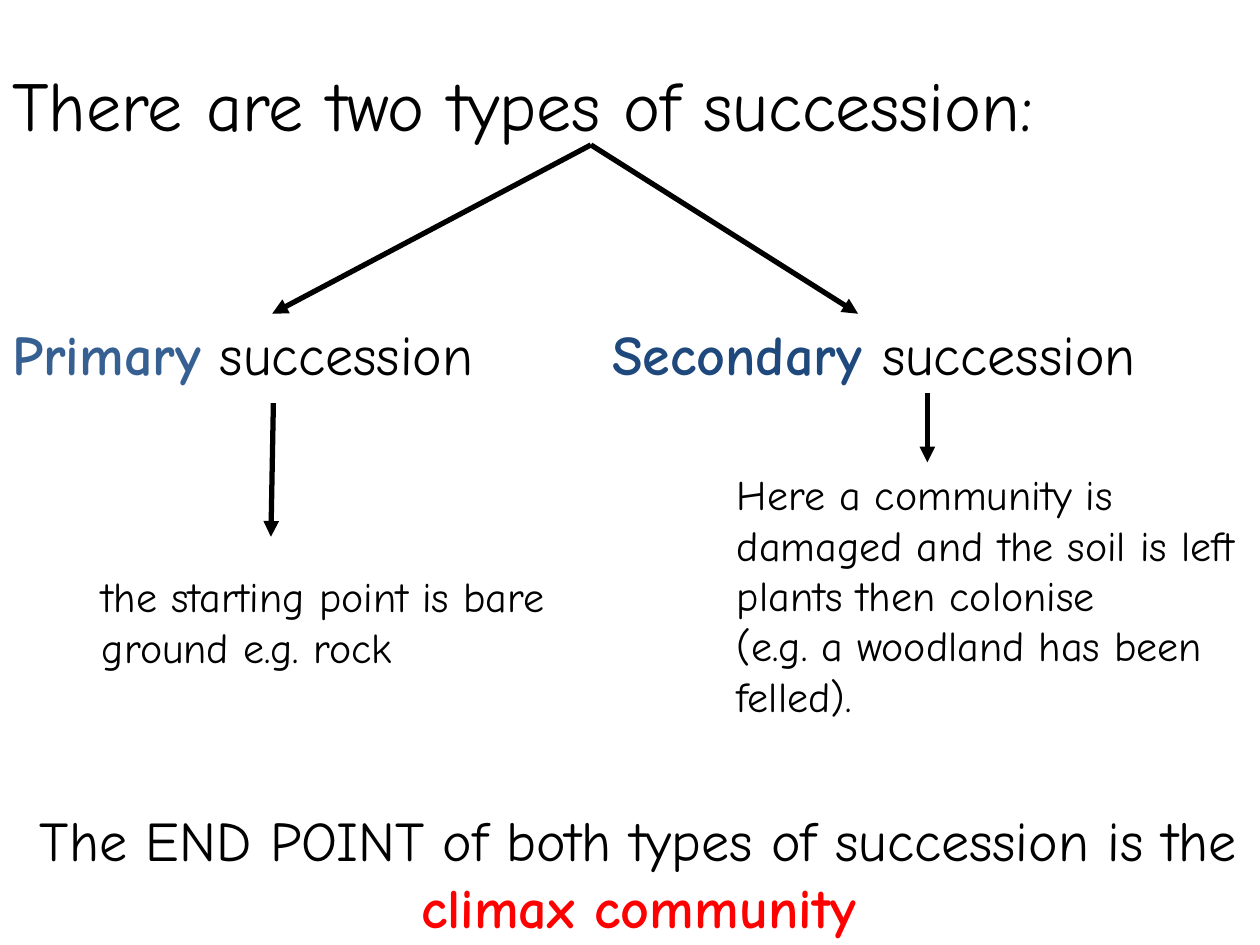
"""Build a slide that explains the two types of ecological succession."""
from lxml.etree import SubElement
from pptx import Presentation
from pptx.dml.color import RGBColor
from pptx.enum.shapes import MSO_CONNECTOR, MSO_SHAPE
from pptx.enum.text import MSO_ANCHOR, MSO_AUTO_SIZE, PP_ALIGN
from pptx.oxml.ns import qn
from pptx.util import Inches, Pt

COLORS = {
    "ink": "000000",
    "paper": "FFFFFF",
    "primary": "376092",
    "secondary": "1F497D",
    "climax": "FF0000",
}
COLUMNS, ROWS = 100, 75
TITLE, HEADING, BODY = 40, 32, 24


def rgb(name):
    return RGBColor.from_string(COLORS[name])


def assign(target, values):
    for attribute, value in values.items():
        setattr(target, attribute, value)


class SlideBuilder:
    def __init__(self, font="Comic Neue", line_width=3):
        self.font, self.line_width = font, Pt(line_width)
        self.deck = Presentation()
        assign(self.deck, {"slide_width": Inches(10), "slide_height": Inches(7.5)})
        self.slide = self.deck.slides.add_slide(self.deck.slide_layouts[6])

    def place(self, column, row):
        return (round(self.deck.slide_width * column / COLUMNS),
                round(self.deck.slide_height * row / ROWS))

    def fill_text(self, frame, paragraphs, size, wrap, align=PP_ALIGN.LEFT):
        assign(frame, {"word_wrap": wrap, "auto_size": MSO_AUTO_SIZE.SHAPE_TO_FIT_TEXT})
        for index, parts in enumerate(paragraphs):
            paragraph = frame.add_paragraph() if index else frame.paragraphs[0]
            paragraph.alignment = align
            for wording, color in parts:
                run = paragraph.add_run()
                run.text = wording
                assign(run.font, {"name": self.font, "size": Pt(size), "bold": color != "ink"})
                run.font.color.rgb = rgb(color)

    def text(self, corner, extent, paragraphs, size, wrap=True):
        box = self.slide.shapes.add_textbox(*self.place(*corner), *self.place(*extent))
        self.fill_text(box.text_frame, paragraphs, size, wrap)

    def banner(self, corner, extent, paragraphs, size):
        panel = self.slide.shapes.add_shape(
            MSO_SHAPE.RECTANGLE, *self.place(*corner), *self.place(*extent))
        panel.shadow.inherit = False
        panel.fill.solid()
        panel.fill.fore_color.rgb = rgb("paper")
        panel.line.fill.background()
        panel.text_frame.vertical_anchor = MSO_ANCHOR.TOP
        self.fill_text(panel.text_frame, paragraphs, size, True, PP_ALIGN.CENTER)

    def arrow(self, start, end):
        connector = self.slide.shapes.add_connector(
            MSO_CONNECTOR.STRAIGHT, *self.place(*start), *self.place(*end))
        connector.line.width = self.line_width
        connector.line.color.rgb = rgb("ink")
        properties = connector._element.spPr
        SubElement(properties.find(qn("a:ln")), qn("a:tailEnd"), type="triangle")
        SubElement(properties, qn("a:effectLst"))


def main():
    builder = SlideBuilder()
    builder.text((0, 4.4), (92.8, 7.7),
                 [[("There are two types of succession:", "ink")]], TITLE, wrap=False)
    fork = (46.9, 11.5)
    for branch_end in ((21.6, 24.9), (68.1, 24.9)):
        builder.arrow(fork, branch_end)

    builder.text((0, 24.9), (41.8, 6.4),
                 [[("Primary", "primary"), (" succession", "ink")]], HEADING, wrap=False)
    builder.text((47.6, 24.9), (48.4, 6.4),
                 [[("Secondary ", "secondary"), ("succession", "ink")]], HEADING, wrap=False)

    builder.arrow((21.7, 32), (21.5, 42.6))
    builder.text((7.1, 44.8), (42.9, 9.1),
                 [[("the starting point is bare ground e.g. rock", "ink")]], BODY)

    builder.arrow((73.6, 31.2), (73.6, 36.7))
    builder.text((57.5, 36.7), (42.5, 21.2), [
        [("Here a community is damaged and the soil is left plants then colonise", "ink")],
        [("(e.g. a woodland has been felled).", "ink")],
    ], BODY)

    builder.banner((0.7, 63.4), (100, 11.8), [[
        ("The END POINT of both types of succession is the ", "ink"),
        ("climax community", "climax"),
    ]], HEADING)
    builder.deck.save("out.pptx")


if __name__ == "__main__":
    main()
